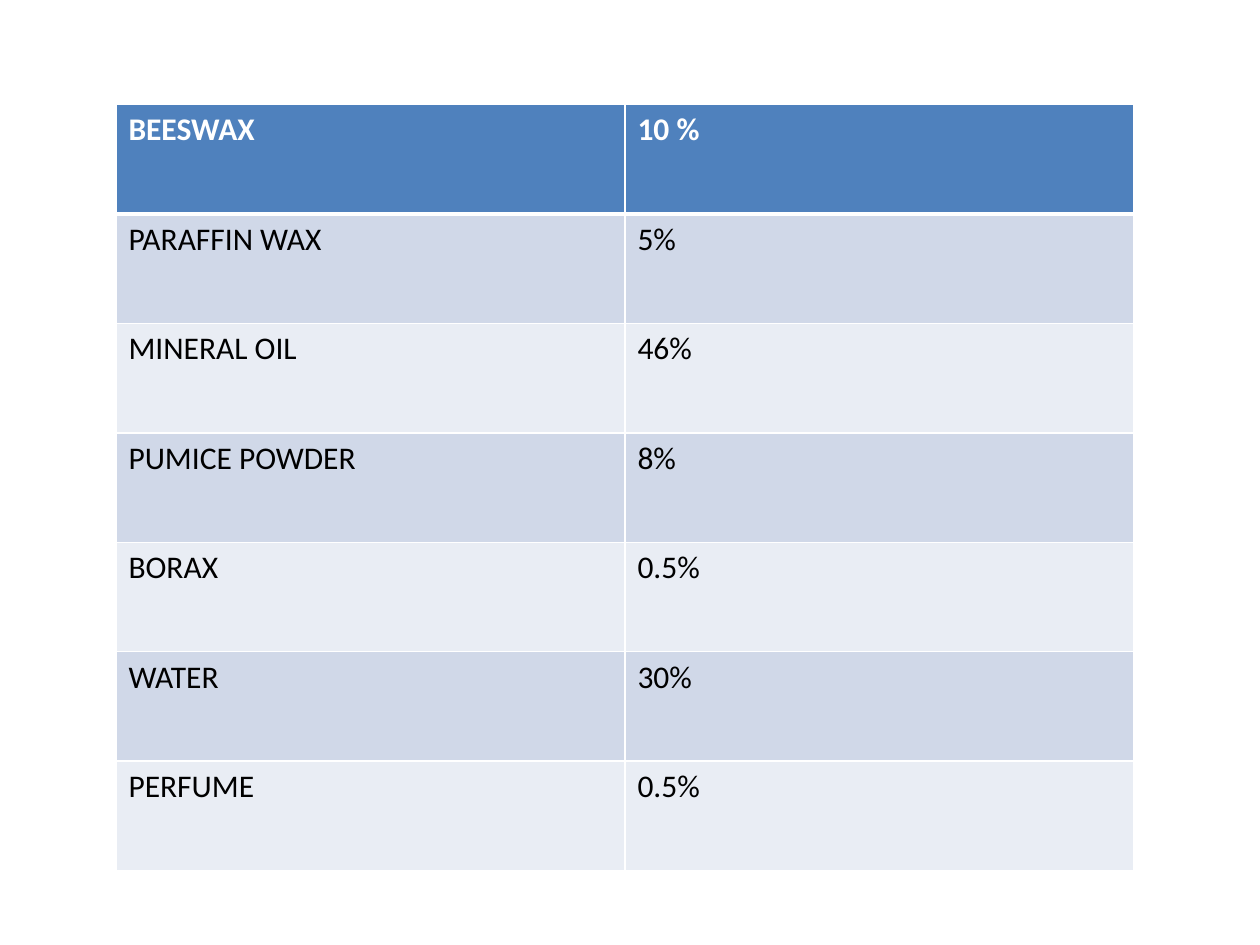
from dataclasses import dataclass

from lxml.etree import SubElement
from pptx import Presentation
from pptx.dml.color import RGBColor
from pptx.oxml.ns import qn
from pptx.util import Inches, Pt


@dataclass(frozen=True)
class Theme:
    font: str = "Calibri"
    size: int = 18
    heading: str = "4F81BD"
    bands: tuple = ("D0D8E8", "E9EDF4")
    light: str = "FFFFFF"
    dark: str = "000000"
    rule: int = 1
    heading_rule: int = 3


THEME = Theme()
SLIDE_WIDTH, SLIDE_HEIGHT = Inches(10), Inches(7.5)
INGREDIENTS = [
    ("BEESWAX", "10 %"),
    ("PARAFFIN WAX", "5%"),
    ("MINERAL OIL", "46%"),
    ("PUMICE POWDER", "8%"),
    ("BORAX", "0.5%"),
    ("WATER", "30%"),
    ("PERFUME", "0.5%"),
]


def write_text(frame, wording, *, color, bold=False, size=THEME.size, font=THEME.font):
    run = frame.paragraphs[0].add_run()
    run.text = wording
    run.font.name = font
    run.font.size = Pt(size)
    run.font.bold = bold
    run.font.color.rgb = RGBColor.from_string(color)


def draw_borders(cell, **widths):
    properties = cell._tc.get_or_add_tcPr()
    for side in "LRTB":
        width = Pt(widths.get(side, THEME.rule))
        border = SubElement(properties, qn(f"a:ln{side}"), w=str(width))
        fill = SubElement(border, qn("a:solidFill"))
        SubElement(fill, qn("a:srgbClr"), val=THEME.light)


def fill_cell(cell, wording, row):
    is_heading = row == 0
    if is_heading:
        draw_borders(cell, B=THEME.heading_rule)
    elif row == 1:
        draw_borders(cell, T=THEME.heading_rule)
    else:
        draw_borders(cell)
    background = THEME.heading if is_heading else THEME.bands[(row - 1) % 2]
    cell.fill.solid()
    cell.fill.fore_color.rgb = RGBColor.from_string(background)
    write_text(
        cell.text_frame,
        wording,
        color=THEME.light if is_heading else THEME.dark,
        bold=is_heading,
    )


def add_formula_table(slide, left, top, width, height):
    formula = slide.shapes.add_table(
        len(INGREDIENTS), len(INGREDIENTS[0]), left, top, width, height
    ).table
    for row, ingredient in enumerate(INGREDIENTS):
        for column, wording in enumerate(ingredient):
            fill_cell(formula.cell(row, column), wording, row)


def main():
    deck = Presentation()
    deck.slide_width, deck.slide_height = SLIDE_WIDTH, SLIDE_HEIGHT
    slide = deck.slides.add_slide(deck.slide_layouts[6])
    add_formula_table(
        slide,
        left=Inches(0.92),
        top=Inches(0.83),
        width=Inches(8.08),
        height=Inches(6.08),
    )
    deck.save("out.pptx")


if __name__ == "__main__":
    main()
